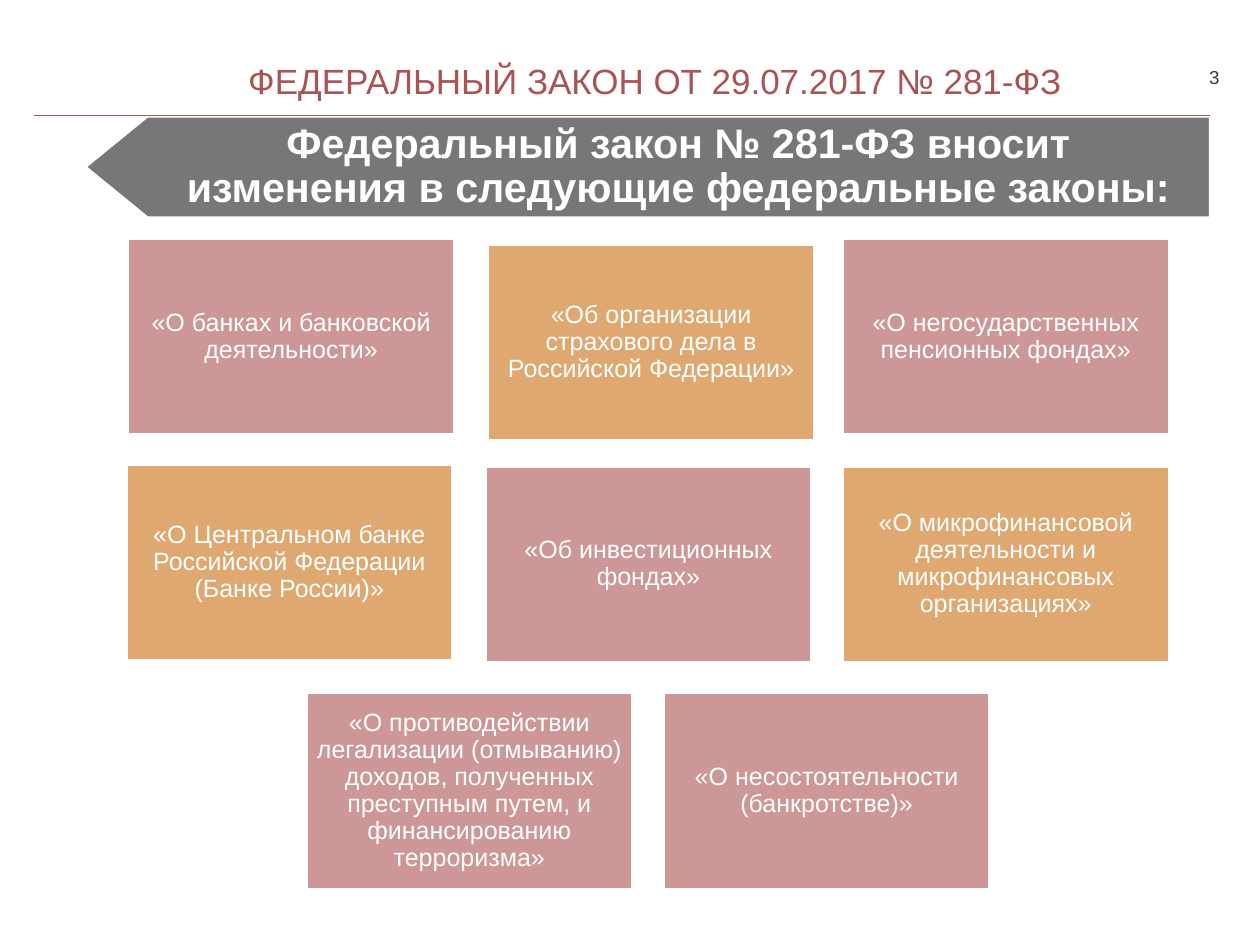
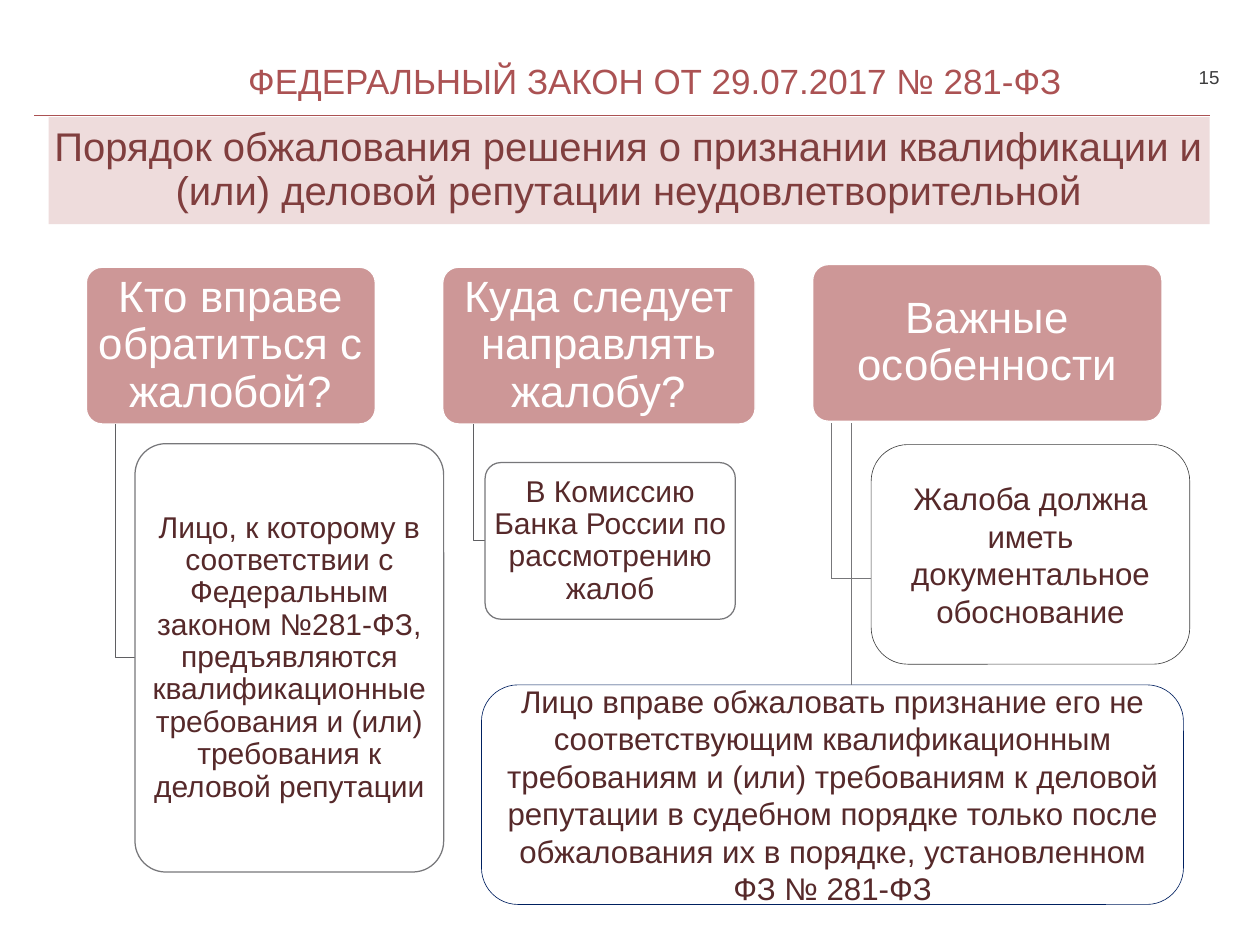
from lxml.etree import SubElement
from pptx import Presentation
from pptx.dml.color import RGBColor
from pptx.enum.shapes import MSO_CONNECTOR, MSO_SHAPE
from pptx.enum.text import MSO_ANCHOR, PP_ALIGN
from pptx.oxml.ns import qn
from pptx.util import Inches, Pt

WHITE = RGBColor(0xFF, 0xFF, 0xFF)
RED = RGBColor(0xAB, 0x52, 0x53)
ROSE = RGBColor(0xCD, 0x97, 0x97)
PALE_ROSE = RGBColor(0xEE, 0xDC, 0xDC)
DARK_ROSE = RGBColor(0x80, 0x3E, 0x3E)
MAROON = RGBColor(0x56, 0x29, 0x2A)
SAND = RGBColor(0xDF, 0xA8, 0x71)
GREY = RGBColor(0x77, 0x77, 0x7A)
BRANCH_GREY = RGBColor(0x5F, 0x5F, 0x62)
NUMBER_GREY = RGBColor(0x3C, 0x3C, 0x3D)
OUTLINE_GREY = RGBColor(0x40, 0x40, 0x40)
NAVY = RGBColor(0x00, 0x20, 0x60)

FONT = "Arial"
LAW_TITLE = "ФЕДЕРАЛЬНЫЙ ЗАКОН ОТ 29.07.2017 № 281-ФЗ"

CARD_SIZE = (3.61, 2.16)
LAWS = [
    (1.43, 2.66, ROSE, "«О банках и банковской деятельности»"),
    (1.41, 5.17, SAND, "«О Центральном банке Российской Федерации (Банке России)»"),
    (9.37, 2.66, ROSE, "«О негосударственных пенсионных фондах»"),
    (5.43, 2.73, SAND, "«Об организации страхового дела в Российской Федерации»"),
    (5.4, 5.19, ROSE, "«Об инвестиционных фондах»"),
    (9.37, 5.19, SAND, "«О микрофинансовой деятельности и микрофинансовых организациях»"),
    (3.41, 7.71, ROSE, "«О противодействии легализации (отмыванию) доходов, полученных "
                       "преступным путем, и финансированию терроризма»"),
    (7.38, 7.71, ROSE, "«О несостоятельности (банкротстве)»"),
]

QUESTIONS = [
    ((0.96, 2.97, 3.21, 1.74), "Кто вправе обратиться с жалобой?"),
    ((4.92, 2.97, 3.47, 1.74), "Куда следует направлять жалобу?"),
    ((9.03, 2.94, 3.88, 1.74), "Важные особенности"),
]
ANSWERS = [
    ((1.5, 4.93, 3.43, 4.76), 1.28,
     "Лицо, к которому в соответствии с Федеральным законом №281-ФЗ, предъявляются "
     "квалификационные требования и (или) требования к деловой репутации"),
    ((5.39, 5.14, 2.78, 1.74), 5.26, "В Комиссию Банка России по рассмотрению жалоб"),
]
FEATURES = [
    ((9.68, 4.94, 3.54, 2.44), OUTLINE_GREY, "Жалоба должна иметь документальное обоснование"),
    ((5.35, 7.61, 7.8, 2.44), NAVY,
     "Лицо вправе обжаловать признание его не соответствующим квалификационным "
     "требованиям и (или) требованиям к деловой репутации в судебном порядке только "
     "после обжалования их в порядке, установленном ФЗ № 281-ФЗ"),
]


def write(shape, text, size, color, insets=(0, 0, 0, 0), bold=False,
          align=PP_ALIGN.CENTER, spacing=0.9):
    """Put one formatted paragraph into a shape."""
    frame = shape.text_frame
    frame.word_wrap = True
    frame.vertical_anchor = MSO_ANCHOR.MIDDLE
    (frame.margin_left, frame.margin_top,
     frame.margin_right, frame.margin_bottom) = map(Inches, insets)
    frame.text = text
    paragraph = frame.paragraphs[0]
    paragraph.alignment = align
    paragraph.line_spacing = spacing
    font = paragraph.runs[0].font
    font.name, font.size, font.bold = FONT, Pt(size), bold
    font.color.rgb = color


def paint(shape, fill=None, line=None, width=1):
    """Set fill and outline, leaving out whichever is None."""
    shape.shadow.inherit = False
    if fill is None:
        shape.fill.background()
    else:
        shape.fill.solid()
        shape.fill.fore_color.rgb = fill
    if line is None:
        shape.line.fill.background()
    else:
        shape.line.color.rgb = line
        shape.line.width = Pt(width)


def add_box(slide, kind, box, fill=None, line=None, width=1):
    """Add a painted preset shape."""
    shape = slide.shapes.add_shape(kind, *map(Inches, box))
    paint(shape, fill, line, width)
    return shape


def add_rounded(slide, box, corner=0.1, **colors):
    """Add a painted rounded rectangle."""
    shape = add_box(slide, MSO_SHAPE.ROUNDED_RECTANGLE, box, **colors)
    shape.adjustments[0] = corner
    return shape


def add_line(slide, start, end, color, width):
    """Add a straight line without a shadow."""
    line = slide.shapes.add_connector(
        MSO_CONNECTOR.STRAIGHT, *map(Inches, (*start, *end)))
    line.line.color.rgb = color
    line.line.width = Pt(width)
    SubElement(line._element.spPr, qn("a:effectLst"))


def add_outline(slide, points, close):
    """Add a freeform through the given points."""
    start, *others = [tuple(map(Inches, point)) for point in points]
    builder = slide.shapes.build_freeform(*start)
    builder.add_line_segments(others, close=close)
    return builder.convert_to_shape()


def add_header(slide, number):
    """Add the rule, law title and page number shared by the slides."""
    for start, end in ((0.38, 0.93), (0.93, 13.44)):
        add_line(slide, (end, 1.28), (start, 1.28), RED, 0.25)
    title = slide.shapes.add_textbox(*map(Inches, (1.25, 0.52, 12.05, 0.8)))
    write(title, LAW_TITLE, 28, RED)
    page = slide.shapes.add_textbox(*map(Inches, (13, 0.5, 0.55, 0.72)))
    write(page, str(number), 15, NUMBER_GREY, align=PP_ALIGN.RIGHT, spacing=1.0)


def add_arrow_band(slide, box, text):
    """Add the grey band that points left."""
    left, top, width, height = box
    right, bottom, shoulder = left + width, top + height, left + 0.68
    band = add_outline(slide, [
        (right, bottom), (shoulder, bottom), (left, top + height / 2),
        (shoulder, top), (right, top)], close=True)
    paint(band, GREY, WHITE)
    write(band, text, 33, WHITE, (0.94, 0.14, 0.26, 0.14), bold=True)


def add_law_card(slide, box, fill, name):
    """Add one coloured card with the name of a law."""
    card = add_box(slide, MSO_SHAPE.RECTANGLE, box, fill, WHITE)
    write(card, name, 20, WHITE, (0.08,) * 4)


def add_question(slide, box, text):
    """Add a rose heading of a column."""
    question = add_rounded(slide, box, fill=ROSE, line=WHITE)
    write(question, text, 35, WHITE, (0.07, 0.05, 0.07, 0.05))


def add_answer(slide, box, stem, text):
    """Add an answer with its elbow branch from the question above."""
    left, top, _, height = box
    middle = top + height / 2
    branch = add_outline(
        slide, [(stem, 4.71), (stem, middle), (left, middle)], close=False)
    paint(branch, line=BRANCH_GREY)
    answer = add_rounded(slide, box, fill=WHITE, line=GREY)
    color = answer.fill._xPr.find(qn("a:solidFill"))[0]
    SubElement(color, qn("a:alpha")).set("val", "90000")
    write(answer, text, 24, MAROON, (0.05, 0.03, 0.05, 0.03))


def add_features(slide, top):
    """Add the two feature notes and the lines leading to them."""
    for box, outline, text in FEATURES:
        note = add_rounded(slide, box, corner=0.1667, line=outline, width=0.5)
        write(note, text, 25, MAROON, (0.1, 0.05, 0.1, 0.05), spacing=1.0)
    (note_left, *_), (_, lower_top, *_) = (feature[0] for feature in FEATURES)
    turn = (9.24, top + 1.73)
    for start, end in (((9.24, top), turn), (turn, (note_left, turn[1])),
                       ((9.46, top), (9.46, lower_top))):
        add_line(slide, start, end, GREY, 0.5)


def build_laws_slide(slide):
    """Build the slide listing the amended laws."""
    add_header(slide, 3)
    add_arrow_band(slide, (0.96, 1.3, 12.48, 1.11),
                   "Федеральный закон № 281-ФЗ вносит изменения "
                   "в следующие федеральные законы:")
    for left, top, fill, name in LAWS:
        add_law_card(slide, (left, top, *CARD_SIZE), fill, name)


def build_appeal_slide(slide):
    """Build the slide on the appeal procedure."""
    add_header(slide, 15)
    for box, text in QUESTIONS:
        add_question(slide, box, text)
    for box, stem, text in ANSWERS:
        add_answer(slide, box, stem, text)
    heading = add_box(slide, MSO_SHAPE.RECTANGLE, (0.54, 1.3, 12.9, 1.19), PALE_ROSE)
    write(heading, "Порядок обжалования решения о признании квалификации и (или) "
                   "деловой репутации неудовлетворительной", 32, DARK_ROSE)
    add_features(slide, 4.7)


def main():
    """Build and save the presentation."""
    deck = Presentation()
    deck.slide_width, deck.slide_height = Inches(14), Inches(10.5)
    for build in (build_laws_slide, build_appeal_slide):
        build(deck.slides.add_slide(deck.slide_layouts[6]))
    deck.save("out.pptx")


if __name__ == "__main__":
    main()
